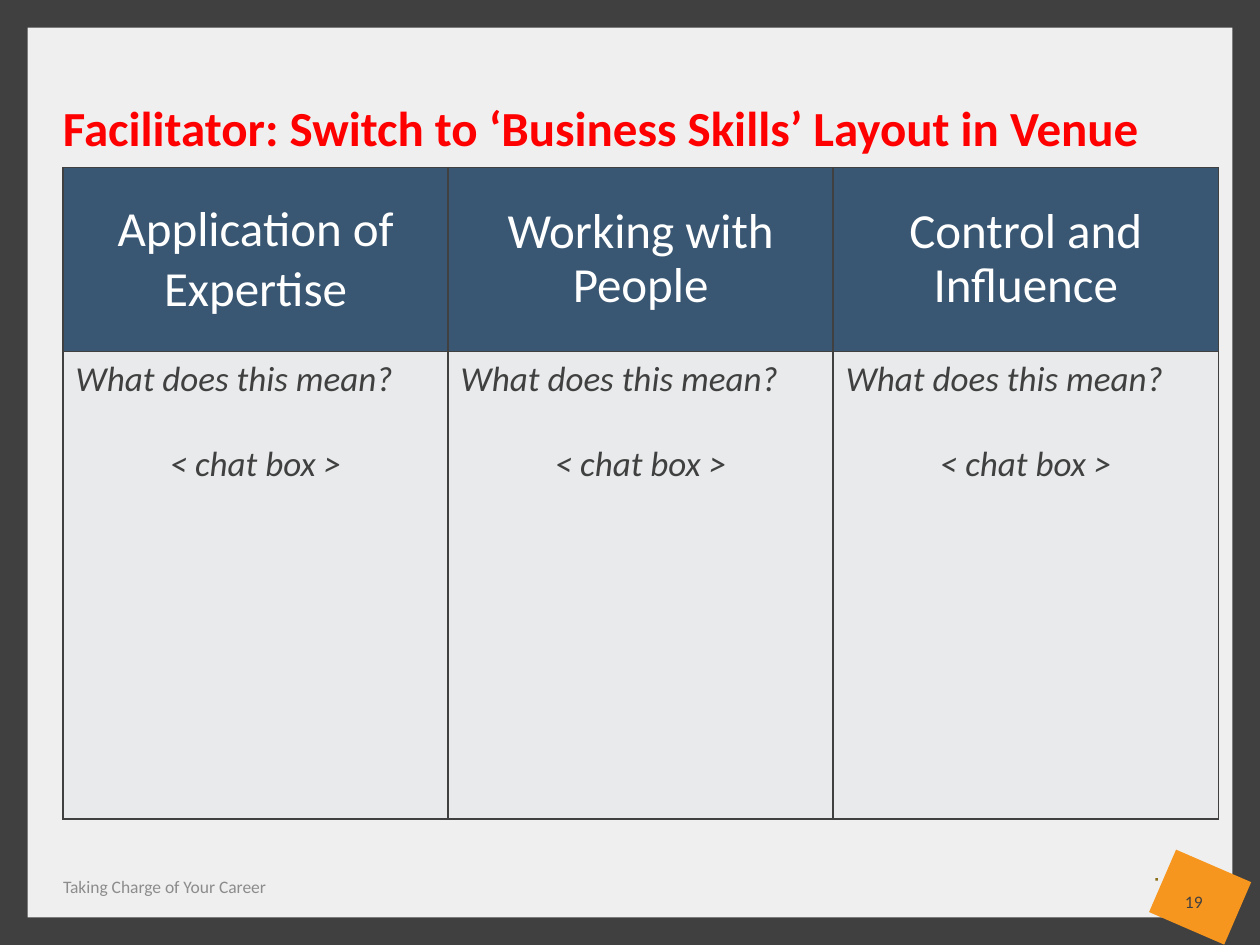
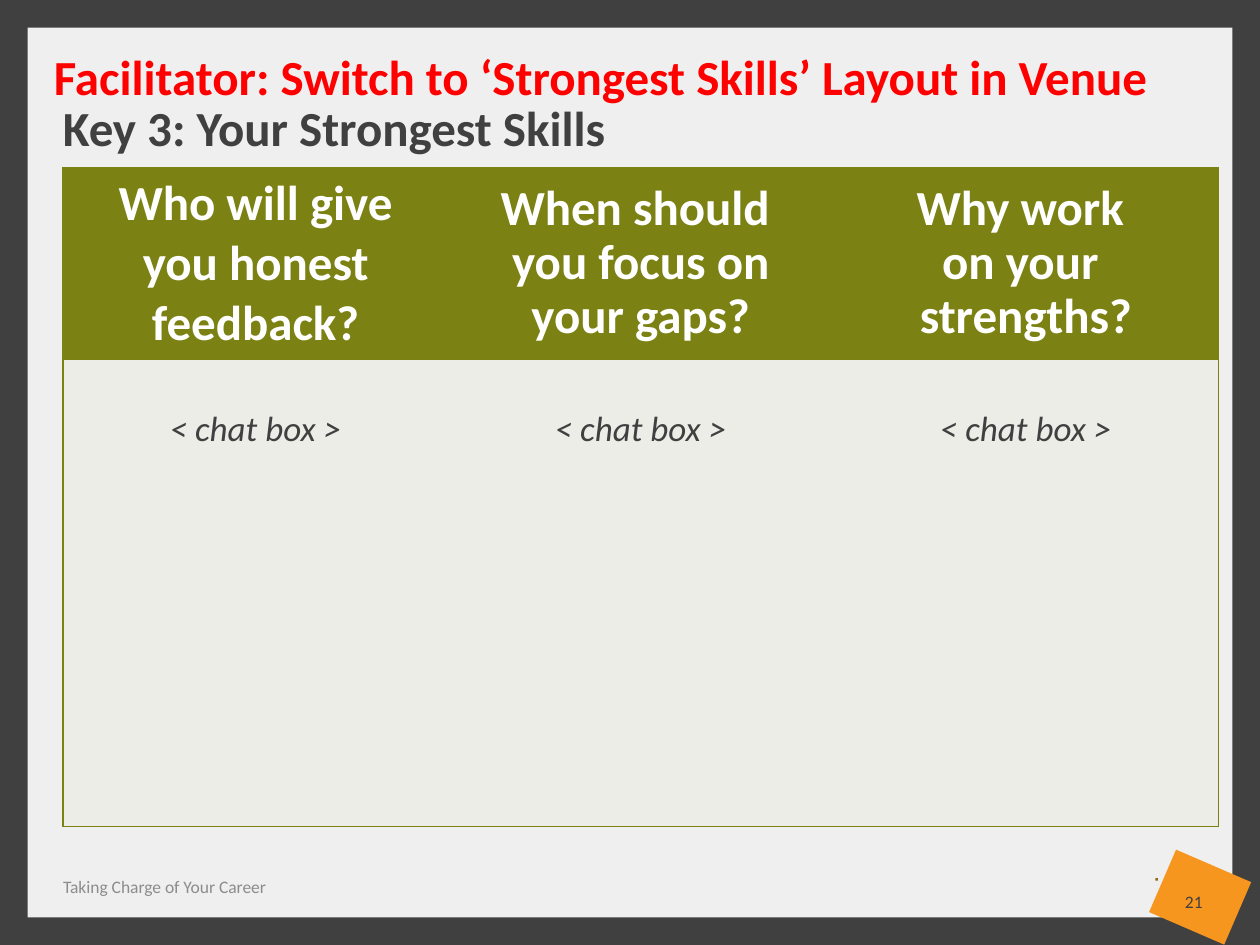
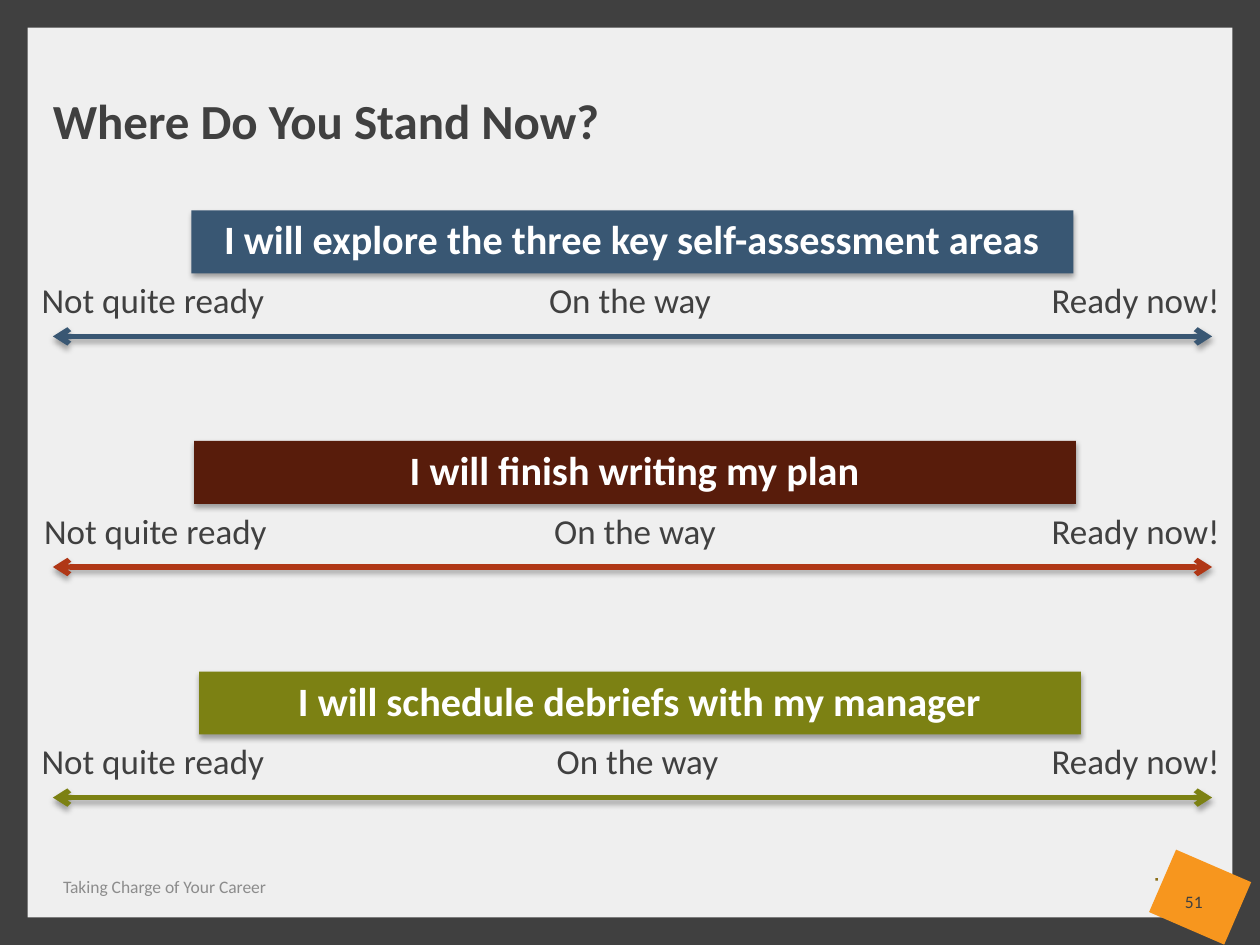
from dataclasses import dataclass

from lxml import etree
from pptx import Presentation
from pptx.dml.color import RGBColor
from pptx.enum.shapes import MSO_CONNECTOR, MSO_SHAPE
from pptx.enum.text import MSO_ANCHOR, PP_ALIGN
from pptx.oxml.ns import qn
from pptx.util import Inches, Pt

RECTANGLE = MSO_SHAPE.RECTANGLE
STRAIGHT = MSO_CONNECTOR.STRAIGHT
LEFT, CENTER, RIGHT = PP_ALIGN.LEFT, PP_ALIGN.CENTER, PP_ALIGN.RIGHT
TOP, MIDDLE, BOTTOM = MSO_ANCHOR.TOP, MSO_ANCHOR.MIDDLE, MSO_ANCHOR.BOTTOM
BORDER_TAGS = {"left": "a:lnL", "right": "a:lnR", "top": "a:lnT", "bottom": "a:lnB"}


@dataclass(frozen=True)
class Theme:
    font: str = "Calibri"
    paper: str = "EFEFEF"
    ink: str = "404040"
    muted: str = "8C8C8C"
    white: str = "FFFFFF"
    alert: str = "FF0000"
    orange: str = "F7961E"
    speck: str = "8B6E18"
    blue: str = "395773"
    blue_tint: str = "E8EAEB"
    olive: str = "7C8113"
    olive_tint: str = "ECEDE7"
    maroon: str = "581C0B"
    rust: str = "B03716"
    title_size: float = 28
    banner_size: float = 23
    body_size: float = 20
    footer_size: float = 10
    blank_line: float = 24.4
    tight: float = 0.9


THEME = Theme()
WIDTH, HEIGHT, FRAME = 10, 7.5, 0.22
TABLE_LEFT, TABLE_TOP, TABLE_WIDTH, BODY_HEIGHT = 0.5, 1.33, 9.17, 3.71


def add_span(para, text, size, color, bold=False, italic=False):
    span = para.add_run()
    span.text = text
    font = span.font
    font.name, font.size = THEME.font, Pt(size)
    font.bold, font.italic = bold, italic
    font.color.rgb = RGBColor.from_string(color)


def add_lines(para, lines, size, color, align=LEFT, spacing=1.0, **style):
    para.alignment, para.line_spacing = align, spacing
    for index, line in enumerate(lines):
        if index:
            para.add_line_break()
        add_span(para, line, size, color, **style)


def set_frame(frame, anchor, inset_x, inset_y):
    frame.word_wrap = True
    frame.vertical_anchor = anchor
    frame.margin_left = frame.margin_right = Inches(inset_x)
    frame.margin_top = frame.margin_bottom = Inches(inset_y)


def add_text(page, area, text, size, color, align=LEFT, anchor=TOP,
             insets=(0, 0), spacing=1.0, bold=False):
    box = page.shapes.add_textbox(*map(Inches, area))
    set_frame(box.text_frame, anchor, *insets)
    add_lines(box.text_frame.paragraphs[0], [text], size, color, align, spacing, bold=bold)


def add_block(page, area, color, rotation=0):
    block = page.shapes.add_shape(RECTANGLE, *map(Inches, area))
    block.shadow.inherit = False
    block.fill.solid()
    block.fill.fore_color.rgb = RGBColor.from_string(color)
    block.line.fill.background()
    block.rotation = rotation
    return block


def add_shadow(shape):
    properties = shape._element.spPr
    effects = properties.find(qn("a:effectLst"))
    if effects is None:
        effects = etree.SubElement(properties, qn("a:effectLst"))
    shadow = etree.SubElement(effects, qn("a:outerShdw"), blurRad=str(Pt(3.1)),
                              dist=str(Pt(1.8)), dir="5400000", rotWithShape="0")
    black = etree.SubElement(shadow, qn("a:srgbClr"), val="000000")
    etree.SubElement(black, qn("a:alpha"), val="35000")


def add_title(page, text, left=0.5, top=0.33, width=9, color=THEME.ink):
    add_text(page, (left, top, width, 0.92), text, THEME.title_size, color,
             anchor=BOTTOM, spacing=THEME.tight, bold=True)


def add_page(deck, number):
    page = deck.slides.add_slide(deck.slide_layouts[6])
    page.background.fill.solid()
    page.background.fill.fore_color.rgb = RGBColor.from_string(THEME.paper)
    for bar in ((0, 0, FRAME, HEIGHT), (WIDTH - FRAME, 0, FRAME, HEIGHT),
                (0, 0, WIDTH, FRAME), (0, HEIGHT - FRAME, WIDTH, FRAME)):
        add_block(page, bar, THEME.ink)
    add_block(page, (9.2, 6.85, 0.65, 0.54), THEME.orange, rotation=23.4)
    add_block(page, (9.17, 6.97, 0.02, 0.02), THEME.speck)
    add_text(page, (0.5, 6.92, 4.51, 0.2), "Taking Charge of Your Career",
             THEME.footer_size, THEME.muted, anchor=BOTTOM)
    add_text(page, (9.26, 7.04, 0.43, 0.2), str(number),
             THEME.footer_size, THEME.ink, CENTER, BOTTOM)
    return page


def set_cell(cell, fill, border, sides):
    cell.fill.solid()
    cell.fill.fore_color.rgb = RGBColor.from_string(fill)
    properties = cell._tc.get_or_add_tcPr()
    for index, (side, tag) in enumerate(BORDER_TAGS.items()):
        line = etree.Element(qn(tag), w=str(Pt(1)))
        if side in sides:
            paint = etree.SubElement(line, qn("a:solidFill"))
            etree.SubElement(paint, qn("a:srgbClr"), val=border)
        else:
            etree.SubElement(line, qn("a:noFill"))
        properties.insert(index, line)


def add_chat_table(page, headings, question, head_height, colors, inner_lines, bold):
    head_fill, body_fill, border = colors
    count = len(headings)
    table = page.shapes.add_table(
        2, count, Inches(TABLE_LEFT), Inches(TABLE_TOP),
        Inches(TABLE_WIDTH), Inches(head_height + BODY_HEIGHT)).table
    table.first_row = table.horz_banding = False
    table.rows[0].height, table.rows[1].height = Inches(head_height), Inches(BODY_HEIGHT)
    for column, heading in enumerate(headings):
        sides = {"top", "bottom"}
        if inner_lines or column == 0:
            sides.add("left")
        if inner_lines or column == count - 1:
            sides.add("right")
        head, body = table.cell(0, column), table.cell(1, column)
        set_cell(head, head_fill, border, sides)
        set_cell(body, body_fill, border, sides)
        head.vertical_anchor = MIDDLE
        add_lines(head.text_frame.paragraphs[0], heading, THEME.title_size, THEME.white,
                  CENTER, THEME.tight if column else 1.0, bold=bold)
        para = body.text_frame.paragraphs[0]
        if question:
            add_lines(para, [question], THEME.body_size, THEME.ink, italic=True)
            para = body.text_frame.add_paragraph()
            para.space_before = Pt(THEME.blank_line)
        else:
            body.margin_top = Inches(0.05) + Pt(THEME.blank_line)
        add_lines(para, ["< chat box >"], THEME.body_size, THEME.ink, CENTER, italic=True)


def add_banner(page, left, top, text, color):
    banner = add_block(page, (left, top, 7, 0.5), color)
    add_shadow(banner)
    set_frame(banner.text_frame, MIDDLE, 0.1, 0.1)
    add_lines(banner.text_frame.paragraphs[0], [text], THEME.banner_size, THEME.white,
              CENTER, THEME.tight, bold=True)


def add_arrow(page, y, color):
    arrow = page.shapes.add_connector(STRAIGHT, Inches(0.42), Inches(y), Inches(9.62), Inches(y))
    arrow.line.width = Pt(3)
    arrow.line.color.rgb = RGBColor.from_string(color)
    line = arrow.line._get_or_add_ln()
    for end in ("a:headEnd", "a:tailEnd"):
        etree.SubElement(line, qn(end), type="arrow")
    add_shadow(arrow)


def add_scale(page, top, text, banner_color, arrow_color, banner_left, start_left, middle_left):
    add_arrow(page, top + 1, arrow_color)
    for label, left, width, align in (("Not quite ready", start_left, 1.9, LEFT),
                                      ("On the way", middle_left, 1.9, CENTER),
                                      ("Ready now!", 8.08, 1.6, RIGHT)):
        add_text(page, (left, top + 0.58, width, 0.42), label, THEME.body_size,
                 THEME.ink, align, spacing=THEME.tight)
    add_banner(page, banner_left, top, text, banner_color)


def add_business_skills(deck):
    page = add_page(deck, 19)
    add_title(page, "Facilitator: Switch to ‘Business Skills’ Layout in Venue", color=THEME.alert)
    headings = (["Application of Expertise"], ["Working with People"], ["Control and Influence"])
    add_chat_table(page, headings, "What does this mean?", 1.46,
                   (THEME.blue, THEME.blue_tint, THEME.ink), inner_lines=True, bold=False)


def add_strongest_skills(deck):
    page = add_page(deck, 21)
    add_title(page, "Key 3: Your Strongest Skills")
    headings = (["Who will give you honest feedback?"],
                ["When should ", "you focus on your gaps?"],
                ["Why work ", "on your ", "strengths?"])
    add_chat_table(page, headings, None, 1.52,
                   (THEME.olive, THEME.olive_tint, THEME.olive), inner_lines=False, bold=True)
    add_text(page, (0.33, 0.32, 9.33, 0.57),
             "Facilitator: Switch to ‘Strongest Skills’ Layout in Venue",
             THEME.title_size, THEME.alert, insets=(0.1, 0.05), bold=True)


def add_standing(deck):
    page = add_page(deck, 51)
    add_title(page, "Where Do You Stand Now?", 0.42, 0.27, 5)
    scales = (
        ("I will explore the three key self-assessment areas",
         THEME.blue, THEME.blue, 1.52, 0.33, 4.05),
        ("I will finish writing my plan",
         THEME.maroon, THEME.rust, 1.54, 0.35, 4.09),
        ("I will schedule debriefs with my manager",
         THEME.olive, THEME.olive, 1.58, 0.33, 4.11),
    )
    for index, scale in enumerate(scales):
        add_scale(page, 1.67 + 1.83 * index, *scale)


def main():
    deck = Presentation()
    deck.slide_width, deck.slide_height = Inches(WIDTH), Inches(HEIGHT)
    add_business_skills(deck)
    add_strongest_skills(deck)
    add_standing(deck)
    deck.save("out.pptx")


if __name__ == "__main__":
    main()
